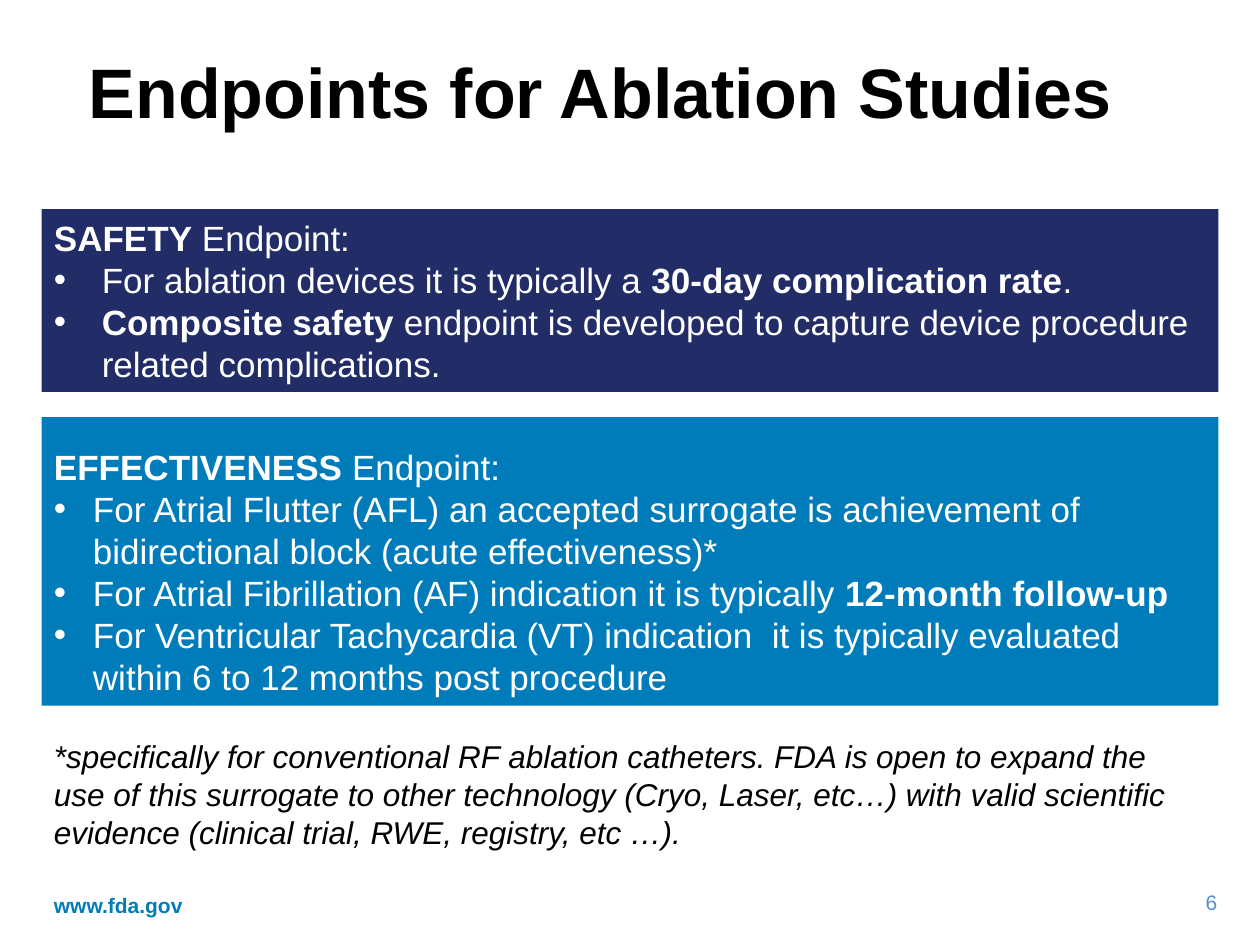
from dataclasses import dataclass

from lxml import etree
from pptx import Presentation
from pptx.dml.color import RGBColor
from pptx.enum.shapes import MSO_SHAPE
from pptx.enum.text import MSO_ANCHOR, PP_ALIGN
from pptx.oxml.ns import qn
from pptx.util import Inches, Pt

RECTANGLE = MSO_SHAPE.RECTANGLE
TOP, MIDDLE = MSO_ANCHOR.TOP, MSO_ANCHOR.MIDDLE
LEFT, CENTER, RIGHT = PP_ALIGN.LEFT, PP_ALIGN.CENTER, PP_ALIGN.RIGHT


@dataclass(frozen=True)
class Theme:
    font: str = "Arial"
    black: RGBColor = RGBColor(0x00, 0x00, 0x00)
    white: RGBColor = RGBColor(0xFF, 0xFF, 0xFF)
    navy: RGBColor = RGBColor(0x22, 0x2C, 0x67)
    blue: RGBColor = RGBColor(0x00, 0x7C, 0xBA)
    page_number: RGBColor = RGBColor(0x55, 0x8E, 0xD5)
    title_size: int = 40
    body_size: int = 20
    note_size: int = 18
    footer_size: int = 12


THEME = Theme()
MARGIN = 0.33
CONTENT_WIDTH = 9.34

SAFETY = [
    [("SAFETY", True), (" Endpoint:", False)],
    [("For ablation devices it is typically a ", False),
     ("30-day complication rate", True), (".", False)],
    [("Composite safety ", True),
     ("endpoint is developed to capture device procedure related complications.", False)],
]
EFFECTIVENESS = [
    [("EFFECTIVENESS", True), (" Endpoint:", False)],
    [("For Atrial Flutter (AFL) an accepted surrogate is achievement of "
      "bidirectional block (acute effectiveness)*", False)],
    [("For Atrial Fibrillation (AF) indication it is typically ", False),
     ("12-month follow-up", True)],
    [("For Ventricular Tachycardia (VT) indication  it is typically evaluated "
      "within 6 to 12 months post procedure", False)],
]
NOTE = (
    "*specifically for conventional RF ablation catheters. FDA is open to expand the "
    "use of this surrogate to other technology (Cryo, Laser, etc…) with valid scientific  "
    "evidence (clinical trial, RWE, registry, etc …)."
)


def style_font(paragraph, size, color, bold=None, italic=None):
    font = paragraph.font
    font.name = THEME.font
    font.size = Pt(size)
    font.color.rgb = color
    font.bold = bold
    font.italic = italic


def add_bullet(paragraph, indent):
    properties = paragraph._p.get_or_add_pPr()
    properties.set("marL", str(Inches(indent)))
    properties.set("indent", str(-Inches(indent)))
    etree.SubElement(properties, qn("a:buFont")).set("typeface", THEME.font)
    etree.SubElement(properties, qn("a:buChar")).set("char", "•")


def fill_title(slide, text):
    title = slide.shapes.title
    title.left, title.top = Inches(0.49), Inches(0.21)
    title.width, title.height = Inches(8.55), Inches(1.01)
    title.text_frame.text = text
    title.text_frame.vertical_anchor = MIDDLE
    paragraph = title.text_frame.paragraphs[0]
    paragraph.alignment = CENTER
    style_font(paragraph, THEME.title_size, THEME.black, bold=True)


def add_text(slide, box, text, size, color, anchor=TOP, align=LEFT, wrap=True,
             bold=None, italic=None):
    frame = slide.shapes.add_textbox(*map(Inches, box)).text_frame
    frame.word_wrap = wrap
    frame.vertical_anchor = anchor
    paragraph = frame.paragraphs[0]
    paragraph.text = text
    paragraph.alignment = align
    style_font(paragraph, size, color, bold, italic)


def add_panel(slide, top, height, fill, lines, indent, heading_spacing=1.0):
    shape = slide.shapes.add_shape(
        RECTANGLE, Inches(MARGIN), Inches(top), Inches(CONTENT_WIDTH), Inches(height))
    shape.shadow.inherit = False
    shape.fill.solid()
    shape.fill.fore_color.rgb = fill
    shape.line.fill.background()
    frame = shape.text_frame
    frame.word_wrap = True
    frame.vertical_anchor = MIDDLE
    for index, runs in enumerate(lines):
        paragraph = frame.add_paragraph() if index else frame.paragraphs[0]
        paragraph.alignment = LEFT
        if index:
            add_bullet(paragraph, indent)
        else:
            paragraph.line_spacing = heading_spacing
        style_font(paragraph, THEME.body_size, THEME.white)
        for text, bold in runs:
            run = paragraph.add_run()
            run.text = text
            run.font.bold = bold


def main():
    presentation = Presentation()
    presentation.slide_width, presentation.slide_height = Inches(10), Inches(7.5)
    slide = presentation.slides.add_slide(presentation.slide_layouts[5])

    fill_title(slide, "Endpoints for Ablation Studies")
    add_panel(slide, 1.66, 1.45, THEME.navy, SAFETY, indent=0.38)
    add_panel(slide, 3.31, 2.29, THEME.blue, EFFECTIVENESS, indent=0.31, heading_spacing=1.5)
    add_text(slide, (MARGIN, 5.8, CONTENT_WIDTH, 1.01), NOTE,
             THEME.note_size, THEME.black, italic=True)
    add_text(slide, (MARGIN, 6.98, 3.17, 0.4), "www.fda.gov",
             THEME.footer_size, THEME.blue, anchor=MIDDLE, bold=True)
    add_text(slide, (9.35, 7.01, 0.41, 0.3), "6",
             THEME.footer_size, THEME.page_number, align=RIGHT, wrap=False)

    presentation.save("out.pptx")


if __name__ == "__main__":
    main()
